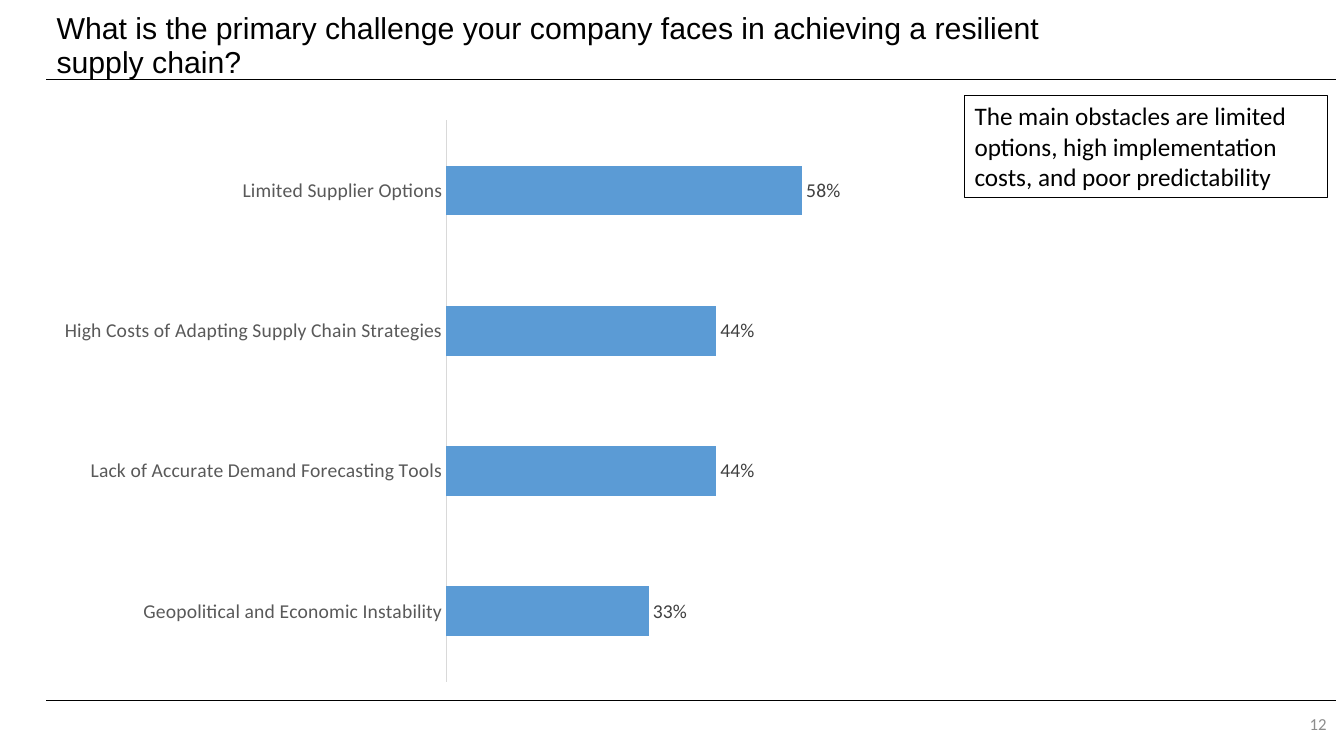
import pptx
import pptx.chart.data
import pptx.dml.color
import pptx.enum.chart
import pptx.enum.shapes
import pptx.enum.text
import pptx.oxml
import pptx.oxml.ns
import pptx.util
from dataclasses import dataclass
from pptx.util import Cm


@dataclass(frozen=True)
class Theme:
    black: str = "000000"
    white: str = "FFFFFF"
    bar: str = "5B9BD5"
    axis: str = "D9D9D9"
    category: str = "595959"
    value: str = "404040"
    number: str = "8C8C8C"
    heading: str = "Arial"
    body: str = "Calibri"
    title_size: float = 21.6
    callout_size: int = 18
    chart_size: int = 14
    number_size: int = 12


def color(value):
    return pptx.dml.color.RGBColor.from_string(value)


def style(font, name, size, value):
    font.name = name
    font.size = pptx.util.Pt(size)
    font.color.rgb = color(value)


theme = Theme()
presentation = pptx.Presentation()
presentation.slide_width = Cm(33.87)
presentation.slide_height = Cm(19.05)
slide = presentation.slides.add_slide(presentation.slide_layouts[5])

left = Cm(1.17)
right = Cm(33.68)
for height in (Cm(2.01), Cm(17.65)):
    rule = slide.shapes.add_connector(
        pptx.enum.shapes.MSO_CONNECTOR.STRAIGHT, left, height, right, height)
    rule.line.color.rgb = color(theme.black)
    rule.line.width = pptx.util.Pt(0.75)
    rule._element.spPr.append(pptx.oxml.parse_xml(
        f'<a:effectLst {pptx.oxml.ns.nsdecls("a")}/>'))

title = slide.shapes.title
title.left, title.top, title.width, title.height = left, Cm(0.48), Cm(25.48), Cm(1.37)
title.text_frame.text = ("What is the primary challenge your company faces "
                         "in achieving a resilient supply chain?")
title.text_frame.auto_size = pptx.enum.text.MSO_AUTO_SIZE.NONE
title.text_frame.vertical_anchor = pptx.enum.text.MSO_ANCHOR.MIDDLE
paragraph = title.text_frame.paragraphs[0]
paragraph.alignment = pptx.enum.text.PP_ALIGN.LEFT
paragraph.line_spacing = 0.95
style(paragraph.font, theme.heading, theme.title_size, theme.black)

chart_data = pptx.chart.data.CategoryChartData(number_format="0%")
chart_data.categories = [
    "Geopolitical and Economic Instability",
    "Lack of Accurate Demand Forecasting Tools",
    "High Costs of Adapting Supply Chain Strategies",
    "Limited Supplier Options",
]
chart_data.add_series("Series 1", (0.33, 0.44, 0.44, 0.58))
chart = slide.shapes.add_chart(
    pptx.enum.chart.XL_CHART_TYPE.BAR_CLUSTERED,
    left, Cm(2.74), Cm(22.91), Cm(14.73), chart_data).chart
chart.has_legend = False
chart.has_title = False
style(chart.font, theme.body, theme.chart_size, theme.black)

category_axis = chart.category_axis
category_axis.major_tick_mark = pptx.enum.chart.XL_TICK_MARK.NONE
category_axis.format.line.color.rgb = color(theme.axis)
category_axis.format.line.width = pptx.util.Pt(0.75)
style(category_axis.tick_labels.font, theme.body, theme.chart_size, theme.category)

value_axis = chart.value_axis
value_axis.visible = False
value_axis.has_major_gridlines = False
value_axis.minimum_scale = 0
value_axis.maximum_scale = 0.8
value_axis.major_unit = 0.2
value_axis.tick_labels.number_format = "0%"
value_axis.tick_labels.number_format_is_linked = False

plot = chart.plots[0]
plot.gap_width = 182
plot.vary_by_categories = False
fill = plot.series[0].format.fill
fill.solid()
fill.fore_color.rgb = color(theme.bar)
plot.has_data_labels = True
labels = plot.data_labels
labels.show_value = True
labels.number_format = "0%"
labels.number_format_is_linked = False
labels.position = pptx.enum.chart.XL_LABEL_POSITION.OUTSIDE_END
style(labels.font, theme.body, theme.chart_size, theme.value)

plot_area = chart._chartSpace.chart.plotArea
for layout in plot_area.findall(pptx.oxml.ns.qn("c:layout")):
    plot_area.remove(layout)
plot_area.insert(0, pptx.oxml.parse_xml(
    f'<c:layout {pptx.oxml.ns.nsdecls("c")}><c:manualLayout>'
    '<c:layoutTarget val="inner"/><c:xMode val="edge"/><c:yMode val="edge"/>'
    '<c:x val="0.44"/><c:y val="0.02"/><c:w val="0.54"/><c:h val="0.96"/>'
    '</c:manualLayout></c:layout>'))

callout = slide.shapes.add_shape(
    pptx.enum.shapes.MSO_SHAPE.RECTANGLE, Cm(24.31), Cm(2.41), Cm(9.14), Cm(2.57))
callout.shadow.inherit = False
callout.fill.solid()
callout.fill.fore_color.rgb = color(theme.white)
callout.line.color.rgb = color(theme.black)
callout.line.width = pptx.util.Pt(1)
callout.text_frame.word_wrap = True
callout.text_frame.auto_size = pptx.enum.text.MSO_AUTO_SIZE.SHAPE_TO_FIT_TEXT
callout.text_frame.vertical_anchor = pptx.enum.text.MSO_ANCHOR.TOP
callout.text_frame.text = ("The main obstacles are limited options, high "
                           "implementation costs, and poor predictability")
paragraph = callout.text_frame.paragraphs[0]
paragraph.alignment = pptx.enum.text.PP_ALIGN.LEFT
style(paragraph.font, theme.body, theme.callout_size, theme.black)

number = slide.shapes.add_textbox(Cm(23.93), Cm(17.83), Cm(9.75), Cm(0.84))
number.text_frame.word_wrap = True
number.text_frame.vertical_anchor = pptx.enum.text.MSO_ANCHOR.MIDDLE
number.text_frame.text = "12"
paragraph = number.text_frame.paragraphs[0]
paragraph.alignment = pptx.enum.text.PP_ALIGN.RIGHT
style(paragraph.font, theme.body, theme.number_size, theme.number)

presentation.save("out.pptx")
